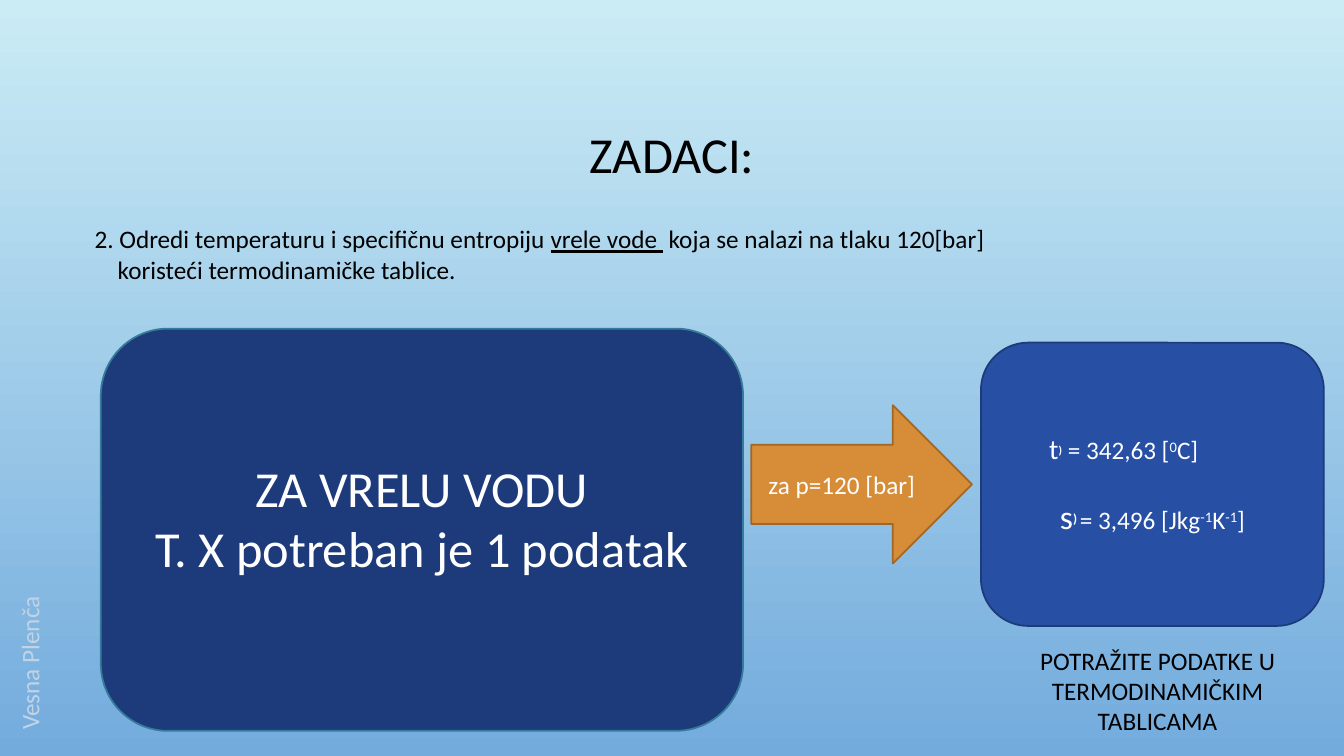
from dataclasses import dataclass

from pptx import Presentation
from pptx.dml.color import RGBColor
from pptx.enum.shapes import MSO_SHAPE as Shape
from pptx.enum.text import MSO_ANCHOR as Anchor, PP_ALIGN as Align
from pptx.util import Inches, Pt


@dataclass(frozen=True)
class Theme:
    font: str = "Calibri"
    sky_top: str = "CBECF5"
    sky_bottom: str = "73ABDD"
    dark: str = "000000"
    light: str = "FFFFFF"
    author: str = "C1D4E5"
    state: tuple = ("1D3B7B", "357C9A")
    arrow: tuple = ("D78D38", "9F6829")
    result: tuple = ("274FA4", "1D3A79")
    outline: float = 1.25
    heading: int = 36
    body: int = 18
    entropy: int = 24
    temperature: int = 20
    mark: int = 14
    entropy_mark: int = 16
    raised: int = 30000


THEME = Theme()
WIDTH, HEIGHT = Inches(13.33), Inches(7.5)


def percent(left, top, width, height):
    return (int(WIDTH * left / 100), int(HEIGHT * top / 100),
            int(WIDTH * width / 100), int(HEIGHT * height / 100))


def paint_background(page):
    fill = page.background.fill
    fill.gradient()
    fill.gradient_angle = 270
    for stop, color in zip(fill.gradient_stops, (THEME.sky_top, THEME.sky_bottom)):
        stop.color.rgb = RGBColor.from_string(color)


def add_span(para, text, color, size=THEME.body, bold=False, underline=False, raised=False):
    span = para.add_run()
    span.text = text
    font = span.font
    font.name, font.size = THEME.font, Pt(size)
    font.bold, font.underline = bold, underline
    font.color.rgb = RGBColor.from_string(color)
    if raised:
        span._r.get_or_add_rPr().set("baseline", str(THEME.raised))


def write(frame, paragraphs, color, align=Align.LEFT, size=THEME.body):
    frame.word_wrap = True
    for index, spans in enumerate(paragraphs):
        para = frame.add_paragraph() if index else frame.paragraphs[0]
        para.alignment = align
        for text, style in spans:
            add_span(para, text, color, **{"size": size, **style})


def indent(para, length):
    para._p.get_or_add_pPr().set("marL", str(Inches(length)))


def add_title(page, text, area):
    title = page.shapes.title
    title.left, title.top, title.width, title.height = area
    title.text_frame.vertical_anchor = Anchor.MIDDLE
    write(title.text_frame, [[(text, {})]], THEME.dark, Align.CENTER, THEME.heading)
    title.text_frame.paragraphs[0].line_spacing = 0.9


def add_text(page, area, paragraphs, color=THEME.dark, align=Align.LEFT):
    frame = page.shapes.add_textbox(*area).text_frame
    write(frame, paragraphs, color, align)
    return frame


def add_panel(page, kind, area, colors, paragraphs, size=THEME.body):
    panel = page.shapes.add_shape(kind, *area)
    panel.shadow.inherit = False
    fill, line = colors
    panel.fill.solid()
    panel.fill.fore_color.rgb = RGBColor.from_string(fill)
    panel.line.color.rgb = RGBColor.from_string(line)
    panel.line.width = Pt(THEME.outline)
    frame = panel.text_frame
    frame.vertical_anchor = Anchor.MIDDLE
    write(frame, paragraphs, THEME.light, Align.CENTER, size)
    return frame


def add_author(page):
    frame = add_text(page, percent(0.68, 70.13, 3.75, 27.73),
                     [[("Vesna Plenča", {})]], THEME.author)
    frame._txBody.bodyPr.set("vert", "vert270")


def add_task(page):
    frame = add_text(page, percent(6.3, 28.93, 89.12, 25.6), [
        [("2. Odredi temperaturu i specifičnu entropiju ", {}),
         ("vrele vode ", {"underline": True}),
         (" koja se nalazi na tlaku 120[bar]", {})],
        [("koristeći termodinamičke tablice.", {})],
    ])
    indent(frame.paragraphs[1], 0.23)


def add_state(page):
    frame = add_panel(page, Shape.ROUNDED_RECTANGLE, percent(7.5, 43.47, 47.79, 53.2),
                      THEME.state,
                      [[("ZA VRELU VODU", {})], [("T. X potreban je 1 podatak", {})]],
                      THEME.heading)
    frame.margin_bottom = Inches(0.3)


def add_result(page):
    power = ("-1", {"raised": True})
    frame = add_panel(page, Shape.ROUNDED_RECTANGLE, percent(72.99, 45.33, 25.51, 37.47),
                      THEME.result, [
        [("t", {"size": THEME.temperature}),
         (")", {"size": THEME.mark, "bold": True, "raised": True}),
         (" = 342,63 [", {}), ("0", {"raised": True}), ("C]", {})],
        [("s", {"size": THEME.entropy}),
         (") ", {"size": THEME.entropy_mark, "bold": True, "raised": True}),
         ("= 3,496 [Jkg", {}), power, ("K", {}), power, ("]", {})],
    ])
    temperature, entropy = frame.paragraphs
    temperature.alignment = Align.LEFT
    indent(temperature, 0.44)
    entropy.space_before = Pt(22)


def main():
    deck = Presentation()
    deck.slide_width, deck.slide_height = WIDTH, HEIGHT
    page = deck.slides.add_slide(deck.slide_layouts.get_by_name("Title Only"))
    paint_background(page)
    add_title(page, "ZADACI:", percent(7.5, 9.07, 85, 23.33))
    add_author(page)
    add_task(page)
    add_state(page)
    add_panel(page, Shape.RIGHT_ARROW, percent(55.89, 53.6, 16.43, 20.93),
              THEME.arrow, [[("za p=120 [bar]", {})]])
    add_result(page)
    add_text(page, percent(74.72, 84.67, 22.81, 13.47),
             [[("POTRAŽITE PODATKE U TERMODINAMIČKIM TABLICAMA", {})]], align=Align.CENTER)
    deck.save("out.pptx")


if __name__ == "__main__":
    main()
